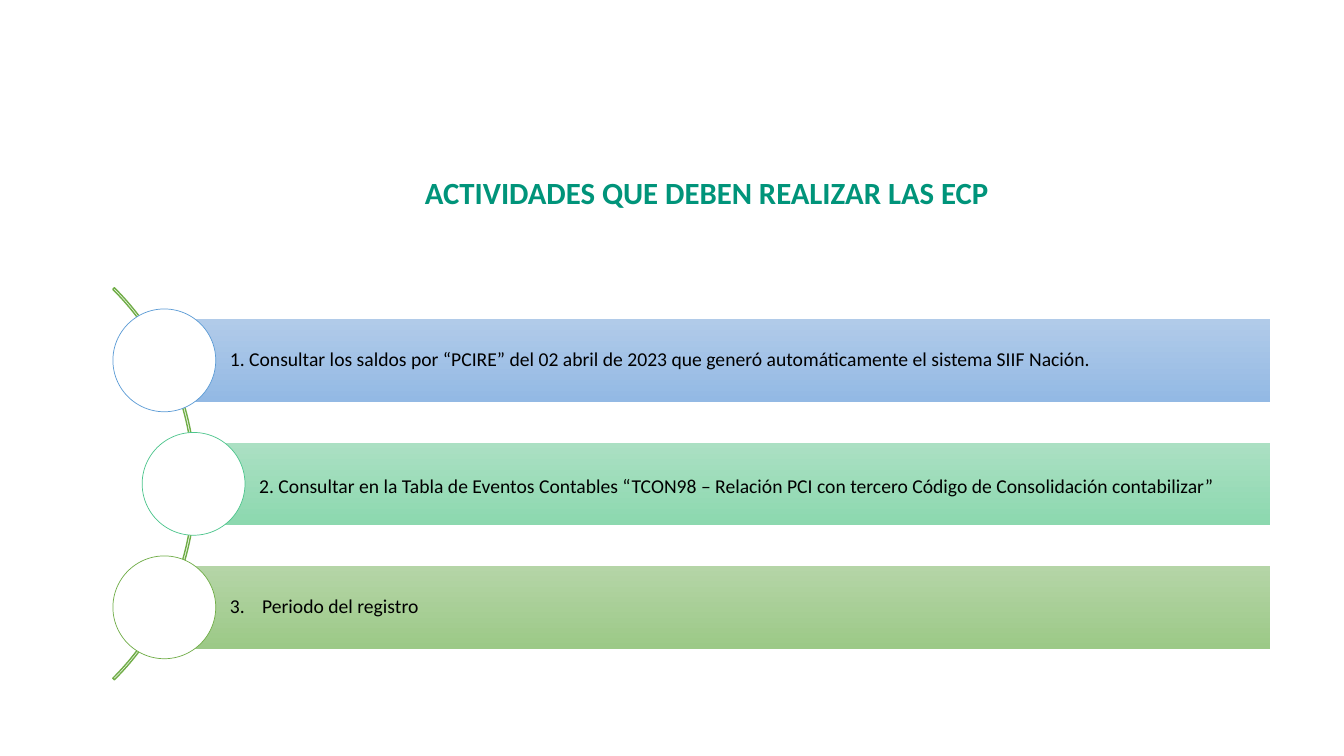
"""Build the slide listing the activities that the ECP must carry out."""
from math import sqrt

from lxml import etree
from pptx import Presentation
from pptx import util as u
from pptx.dml.color import RGBColor
from pptx.enum import shapes, text
from pptx.oxml.ns import qn

GREEN_TITLE = RGBColor(0x00, 0x94, 0x7A)
GREEN_LINE = RGBColor(0x70, 0xAD, 0x47)
BLUE_LINE = RGBColor(0x5B, 0x9B, 0xD5)
MINT_LINE = RGBColor(0x4D, 0xC5, 0x8D)
BLUE_STOPS = RGBColor(0xB1, 0xCB, 0xE9), RGBColor(0x93, 0xB9, 0xE4)
MINT_STOPS = RGBColor(0xAB, 0xE0, 0xC3), RGBColor(0x8C, 0xD8, 0xAF)
GREEN_STOPS = RGBColor(0xB5, 0xD5, 0xA7), RGBColor(0x9C, 0xC9, 0x87)
BLACK = RGBColor(0, 0, 0)
WHITE = RGBColor(0xFF, 0xFF, 0xFF)

TITLE = "ACTIVIDADES QUE DEBEN REALIZAR LAS ECP"
ACTIVITIES = [
    ("1. Consultar los saldos por “PCIRE” del 02 abril de 2023 que generó "
     "automáticamente el sistema SIIF Nación.", BLUE_STOPS, BLUE_LINE, 0.04),
    ("2. Consultar en la Tabla de Eventos Contables “TCON98 – Relación PCI con "
     "tercero Código de Consolidación contabilizar”", MINT_STOPS, MINT_LINE, 0.1),
    ("3.\tPeriodo del registro", GREEN_STOPS, GREEN_LINE, 0.04),
]

WIDTH, HEIGHT = 13.33, 7.5
ARC_X, ARC_Y, ARC_SIZE = -0.81, 4.8, 5.5
CURVE_RADIUS = 2.73
ROW_PITCH, BAR_HEIGHT, BAR_RIGHT = 1.225, 0.82, 12.6
CIRCLE_SIZE = 1.02
NUMBER_TAB = 0.32


def add_shape(page, kind, left, top, width, height):
    shape = page.shapes.add_shape(kind, *map(u.Inches, (left, top, width, height)))
    shape.shadow.inherit = False
    return shape


def add_centred(page, kind, x, y, size):
    return add_shape(page, kind, x - size / 2, y - size / 2, size, size)


def set_outline(shape, colour, points):
    shape.line.color.rgb = colour
    shape.line.width = u.Pt(points)


def set_font(para, size, colour, bold=False):
    for span in para.runs:
        span.font.name = "Calibri"
        span.font.size = u.Pt(size)
        span.font.bold = bold
        span.font.color.rgb = colour


def add_title(page):
    box = page.shapes.add_textbox(*map(u.Inches, (1.46, 1.43, 11.1, 1.01)))
    frame = box.text_frame
    frame.word_wrap = True
    frame.margin_top = u.Inches(0.29)
    frame.text = TITLE
    para = frame.paragraphs[0]
    para.alignment = text.PP_ALIGN.CENTER
    set_font(para, 22, GREEN_TITLE, bold=True)


def add_arc(page):
    arc = add_centred(page, shapes.MSO_SHAPE.BLOCK_ARC, ARC_X, ARC_Y, ARC_SIZE)
    for index, value in enumerate((189, 27, 0.004)):
        arc.adjustments[index] = value
    arc.fill.background()
    set_outline(arc, GREEN_LINE, 1)


def add_activity(page, row, wording, stops, outline, top_inset):
    offset = (row - (len(ACTIVITIES) - 1) / 2) * ROW_PITCH
    x, y = ARC_X + sqrt(CURVE_RADIUS ** 2 - offset ** 2), ARC_Y + offset

    bar = add_shape(page, shapes.MSO_SHAPE.RECTANGLE,
                    x, y - BAR_HEIGHT / 2, BAR_RIGHT - x, BAR_HEIGHT)
    bar.line.fill.background()
    bar.fill.gradient()
    bar.fill.gradient_angle = 270
    for stop, colour in zip(bar.fill.gradient_stops, stops):
        stop.color.rgb = colour

    frame = bar.text_frame
    frame.word_wrap = True
    frame.vertical_anchor = text.MSO_ANCHOR.MIDDLE
    frame.margin_left = u.Inches(0.65)
    frame.margin_right = frame.margin_bottom = u.Inches(0.04)
    frame.margin_top = u.Inches(top_inset)
    frame.text = wording
    para = frame.paragraphs[0]
    para.alignment = text.PP_ALIGN.LEFT
    if "\t" in wording:
        tabs = etree.SubElement(para._p.get_or_add_pPr(), qn("a:tabLst"))
        etree.SubElement(tabs, qn("a:tab"), pos=str(u.Inches(NUMBER_TAB)), algn="l")
    para.line_spacing = 0.9
    set_font(para, 14, BLACK)

    circle = add_centred(page, shapes.MSO_SHAPE.OVAL, x, y, CIRCLE_SIZE)
    circle.fill.solid()
    circle.fill.fore_color.rgb = WHITE
    set_outline(circle, outline, 0.5)


def main():
    deck = Presentation()
    deck.slide_width, deck.slide_height = u.Inches(WIDTH), u.Inches(HEIGHT)
    page = deck.slides.add_slide(deck.slide_layouts[6])
    add_title(page)
    add_arc(page)
    for row, activity in enumerate(ACTIVITIES):
        add_activity(page, row, *activity)
    deck.save("out.pptx")


if __name__ == "__main__":
    main()
